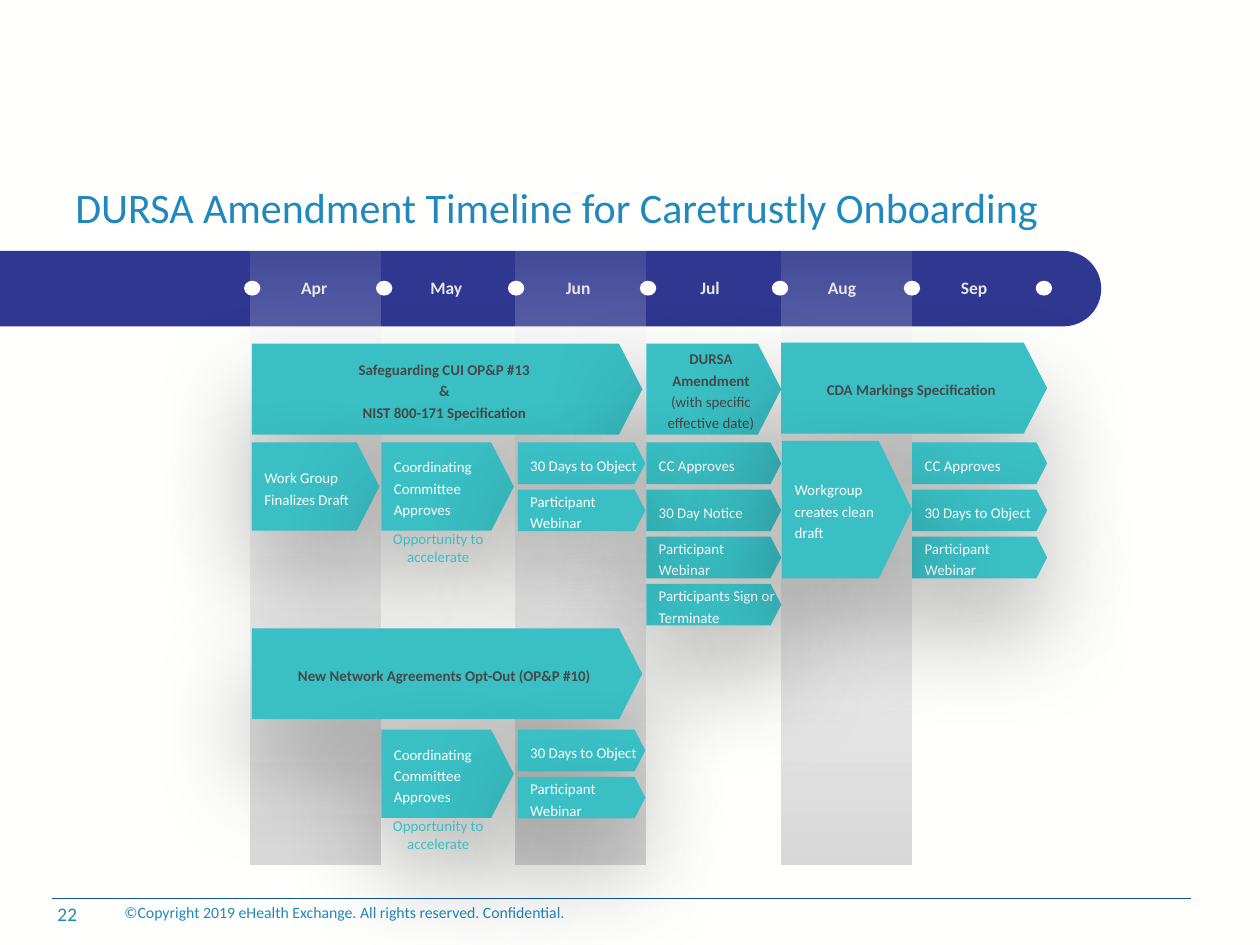
"""Build the amendment timeline slide with month bands and process arrows."""
import pptx
import pptx.util
import pptx.oxml
import pptx.oxml.ns
import pptx.dml.color
import pptx.enum.shapes
import pptx.enum.text
from lxml import etree

Cm = pptx.util.Cm
Pt = pptx.util.Pt
RGBColor = pptx.dml.color.RGBColor
Shape = pptx.enum.shapes.MSO_SHAPE
Align = pptx.enum.text.PP_ALIGN
Anchor = pptx.enum.text.MSO_ANCHOR
qn = pptx.oxml.ns.qn

BACKGROUND = RGBColor(0xFF, 0xFF, 0xFE)
WHITE = RGBColor(0xFF, 0xFF, 0xFF)
BLUE = RGBColor(0x20, 0x88, 0xBD)
NUMBER_BLUE = RGBColor(0x25, 0x88, 0xB6)
RULE_BLUE = RGBColor(0x13, 0x52, 0x9D)
NAVY = RGBColor(0x2F, 0x37, 0x90)
BAND_TOP = RGBColor(0xF2, 0xF2, 0xF2)
BAND_BOTTOM = RGBColor(0xD9, 0xD9, 0xD9)
MONTH_GRAY = RGBColor(0xE7, 0xE6, 0xE6)
TEAL = RGBColor(0x3A, 0xBF, 0xC4)
DARK = RGBColor(0x47, 0x48, 0x47)

MONTH_STEP = 2.66
ROW_STEP = 0.95


def write(shape, paragraphs, size, color, align=Align.LEFT, anchor=Anchor.TOP, insets=None, arrow=False):
    frame = shape.text_frame
    frame.word_wrap = True
    frame.vertical_anchor = anchor
    if insets:
        frame.margin_left, frame.margin_right = Cm(insets[0]), Cm(insets[1])
        frame.margin_top = frame.margin_bottom = Cm(0.05)
    for index, runs in enumerate(paragraphs):
        paragraph = frame.add_paragraph() if index else frame.paragraphs[0]
        paragraph.alignment = align
        if arrow:
            paragraph._p.get_or_add_pPr().set("marL", str(Cm(0.25)))
            paragraph.line_spacing = 1.2
        for text, bold in runs:
            run = paragraph.add_run()
            run.text = text
            run.font.name = "Calibri"
            run.font.size = Pt(size)
            run.font.bold = bold
            run.font.color.rgb = color


def add_plain(kind, left, top, width, height, color):
    shape = slide.shapes.add_shape(kind, Cm(left), Cm(top), Cm(width), Cm(height))
    shape.shadow.inherit = False
    shape.fill.solid()
    shape.fill.fore_color.rgb = color
    shape.line.fill.background()
    return shape


presentation = pptx.Presentation()
presentation.slide_width = Cm(25.4)
presentation.slide_height = Cm(19.05)
slide = presentation.slides.add_slide(presentation.slide_layouts[6])
slide.background.fill.solid()
slide.background.fill.fore_color.rgb = BACKGROUND

footer_rule = slide.shapes.add_connector(
    pptx.enum.shapes.MSO_CONNECTOR.STRAIGHT, Cm(1.04), Cm(18.11), Cm(24), Cm(18.11))
footer_rule.line.color.rgb = RULE_BLUE
footer_rule.line.width = Pt(0.5)
etree.SubElement(footer_rule._element.spPr, qn("a:effectLst"))

for text, left, top, width, height, size, color, anchor in [
    ("©Copyright 2019 eHealth Exchange. All rights reserved. Confidential.",
     2.26, 17.91, 9.83, 0.94, 9, BLUE, Anchor.MIDDLE),
    ("22", 0.91, 18.06, 5.92, 1.02, 11, NUMBER_BLUE, Anchor.TOP),
    ("DURSA Amendment Timeline for Caretrustly Onboarding",
     1.27, 2.03, 22.86, 2.77, 24, BLUE, Anchor.BOTTOM),
]:
    box = slide.shapes.add_textbox(Cm(left), Cm(top), Cm(width), Cm(height))
    write(box, [[(text, False)]], size, color, anchor=anchor)

month_bar = add_plain(Shape.ROUND_2_SAME_RECTANGLE, 10.34, -5.28, 1.52, 22.2, NAVY)
month_bar.adjustments[0] = 0.5
month_bar.adjustments[1] = 0
month_bar.rotation = 90

for column in (0, 2, 1):
    band = add_plain(Shape.RECTANGLE, 5.05 + 5.35 * column, 5, 2.62, 12.42, BAND_TOP)
    band.fill.gradient()
    band.fill.gradient_angle = 270
    for stop, color in zip(band.fill.gradient_stops, (BAND_TOP, BAND_BOTTOM)):
        stop.color.rgb = color
    top_color = band._element.spPr.find(".//" + qn("a:srgbClr"))
    etree.SubElement(top_color, qn("a:alpha"), val="10000")

for index, month in enumerate(["Apr", "May", "Jun", "Jul", "Aug", "Sep"]):
    box = slide.shapes.add_textbox(Cm(5.6 + MONTH_STEP * index), Cm(5.54), Cm(1.47), Cm(0.53))
    write(box, [[(month, True)]], 10, MONTH_GRAY, Align.CENTER, insets=(0.13, 0.13))

for index in range(7):
    add_plain(Shape.OVAL, 4.92 + MONTH_STEP * index, 5.66, 0.33, 0.3, WHITE)

HEADING, STEP, NOTE = "heading", "step", "note"
JUL, AUG, SEP, JUN = 13.03, 15.77, 18.39, 10.44
ROW, LOWER_ROW = 8.92, 14.71
items = [
    (HEADING, 5.08, 6.93, 7.87, 1.83, 0.13,
     [[("Safeguarding CUI OP&P #13", True)], [("&", True)], [("NIST 800-171 Specification", True)]]),
    (HEADING, JUL, 6.93, 2.72, 1.83, 0.13,
     [[("DURSA Amendment ", True), ("(with specific effective date)", False)]]),
    (STEP, JUL, ROW, 2.72, 0.84, 0.13, "CC Approves"),
    (STEP, JUL, ROW + ROW_STEP, 2.72, 0.84, 0.13, "30 Day Notice"),
    (STEP, JUL, ROW + 2 * ROW_STEP, 2.72, 0.84, 0.13, "Participant Webinar"),
    (STEP, 5.08, ROW, 2.57, 1.78, 0.13, "Work Group Finalizes Draft"),
    (STEP, JUL, ROW + 3 * ROW_STEP, 2.72, 0.84, 0, "Participants Sign or Terminate"),
    (HEADING, 15.75, 6.91, 5.36, 1.83, 0.13, [[("CDA Markings Specification", True)]]),
    (STEP, SEP, ROW, 2.72, 0.84, 0.13, "CC Approves"),
    (STEP, SEP, ROW + ROW_STEP, 2.72, 0.84, 0.13, "30 Days to Object"),
    (STEP, SEP, ROW + 2 * ROW_STEP, 2.72, 0.84, 0.13, "Participant Webinar"),
    (STEP, AUG, 8.89, 2.62, 2.77, 0.13, "Workgroup creates clean draft"),
]
for row in (ROW, LOWER_ROW):
    if row == LOWER_ROW:
        items.append((HEADING, 5.08, 12.67, 7.87, 1.83, 0.13,
                      [[("New Network Agreements Opt-Out (OP&P #10)", True)]]))
    items += [
        (STEP, 7.69, row, 2.67, 1.78, 0.13, "Coordinating Committee Approves"),
        (STEP, JUN, row, 2.57, 0.84, 0, "30 Days to Object"),
        (STEP, JUN, row + ROW_STEP, 2.57, 0.84, 0, "Participant Webinar"),
        (NOTE, 7.49, row + 1.63, 2.69, 0.99, None, "Opportunity to accelerate"),
    ]

for kind, left, top, width, height, right_inset, content in items:
    if kind == NOTE:
        box = slide.shapes.add_textbox(Cm(left), Cm(top), Cm(width), Cm(height))
        write(box, [[(content, False)]], 8.5, TEAL, Align.CENTER)
        continue
    arrow = add_plain(Shape.PENTAGON, left, top, width, height, TEAL)
    arrow.adjustments[0] = 0.257
    effects = arrow._element.spPr.find(qn("a:effectLst"))
    shadow = etree.SubElement(effects, qn("a:outerShdw"), blurRad=str(Pt(60)),
                              dist=str(Pt(30)), dir="5400000", rotWithShape="0")
    shadow_color = etree.SubElement(shadow, qn("a:srgbClr"), val="000000")
    etree.SubElement(shadow_color, qn("a:alpha"), val="30000")
    if kind == HEADING:
        write(arrow, content, 8.5, DARK, Align.CENTER, Anchor.MIDDLE, (0, right_inset), True)
    else:
        write(arrow, [[(content, False)]], 8.5, WHITE, Align.LEFT, Anchor.MIDDLE, (0, right_inset), True)

presentation.save("out.pptx")
